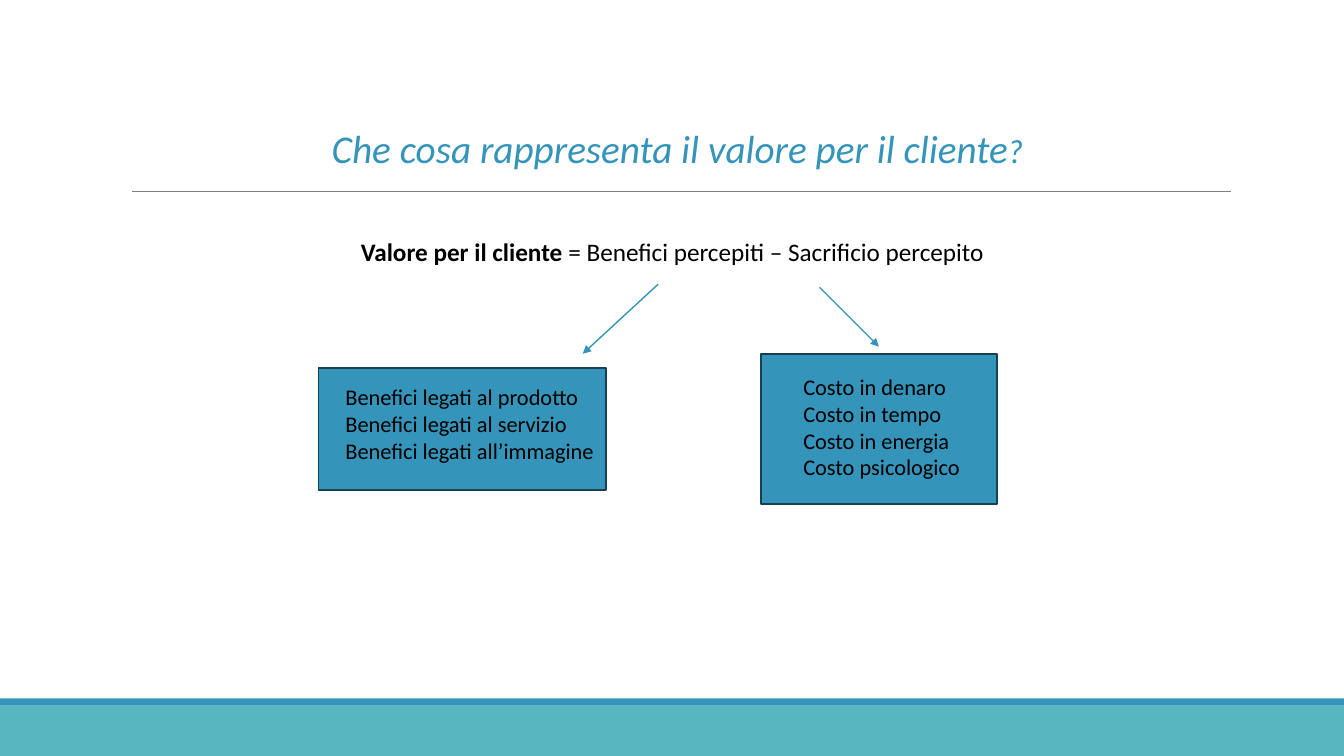
from pptx import Presentation
from pptx.dml.color import RGBColor
from pptx.enum.shapes import MSO_CONNECTOR, MSO_SHAPE
from pptx.enum.text import MSO_ANCHOR, PP_ALIGN
from pptx.oxml.ns import qn
from pptx.util import Inches, Pt
from lxml import etree

STRAIGHT = MSO_CONNECTOR.STRAIGHT
RECTANGLE = MSO_SHAPE.RECTANGLE
TOP = MSO_ANCHOR.TOP
LEFT, CENTER = PP_ALIGN.LEFT, PP_ALIGN.CENTER

BLUE = RGBColor(0x34, 0x94, 0xBA)
TEAL = RGBColor(0x58, 0xB6, 0xC0)
NAVY = RGBColor(0x17, 0x41, 0x52)
GRAY = RGBColor(0x80, 0x80, 0x80)
BLACK = RGBColor(0, 0, 0)

FONT = "Calibri"
SLIDE_WIDTH, SLIDE_HEIGHT = Inches(13.33), Inches(7.5)
COLUMNS, ROWS = 100, 75

BENEFITS = ["Benefici legati al prodotto", "Benefici legati al servizio",
            "Benefici legati all’immagine"]
COSTS = ["Costo in denaro", "Costo in tempo", "Costo in energia", "Costo psicologico"]


def across(columns):
    return round(SLIDE_WIDTH * columns / COLUMNS)


def down(rows):
    return round(SLIDE_HEIGHT * rows / ROWS)


def place(left, top, width, height):
    """Turn grid columns and rows into slide lengths."""
    return across(left), down(top), across(width), down(height)


def apply_format(target, values):
    for name, value in values.items():
        setattr(target, name, value)


def add_span(para, text, **font_format):
    span = para.add_run()
    span.text = text
    color = font_format.pop("color")
    apply_format(span.font, {"name": FONT, **font_format})
    span.font.color.rgb = color


def add_rectangle(page, area, fill, outline=None):
    box = page.shapes.add_shape(RECTANGLE, *place(*area))
    box.shadow.inherit = False
    box.fill.solid()
    box.fill.fore_color.rgb = fill
    if outline is None:
        box.line.fill.background()
    else:
        box.line.color.rgb = outline
        box.line.width = Pt(1.25)
    return box


def add_list_box(page, area, lines, inset_left, inset_top):
    box = add_rectangle(page, area, BLUE, NAVY)
    frame = box.text_frame
    apply_format(frame, {"word_wrap": True, "vertical_anchor": TOP,
                         "margin_left": across(inset_left), "margin_right": 0,
                         "margin_top": down(inset_top), "margin_bottom": 0})
    for index, line in enumerate(lines):
        para = frame.add_paragraph() if index else frame.paragraphs[0]
        para.alignment = LEFT
        add_span(para, line, size=Pt(16), color=BLACK)


def add_line(page, start, end, color, width, arrow=False):
    line = page.shapes.add_connector(STRAIGHT, across(start[0]), down(start[1]),
                                     across(end[0]), down(end[1]))
    line.line.color.rgb = color
    line.line.width = Pt(width)
    if arrow:
        etree.SubElement(line.line._get_or_add_ln(), qn("a:tailEnd"), type="triangle")
    etree.SubElement(line._element.spPr, qn("a:effectLst"))


def add_question_and_formula(page):
    frame = page.shapes.add_textbox(*place(8.78, 12.4, 82.5, 24.4)).text_frame
    apply_format(frame, {"word_wrap": True, "margin_left": 0, "margin_right": 0})

    question = frame.paragraphs[0]
    question._p.get_or_add_pPr().set("marL", str(Inches(0.1)))
    apply_format(question, {"alignment": CENTER, "line_spacing": 0.9})
    add_span(question, "Che cosa rappresenta il valore per il cliente",
             size=Pt(28), italic=True, color=BLUE)
    add_span(question, "?", size=Pt(24), italic=True, color=BLUE)

    formula = frame.add_paragraph()
    apply_format(formula, {"alignment": CENTER, "line_spacing": 0.9,
                           "space_before": Pt(48)})
    add_span(formula, "Valore per il cliente ", size=Pt(18), bold=True, color=BLACK)
    add_span(formula, "= Benefici percepiti – Sacrificio percepito",
             size=Pt(18), color=BLACK)


def main():
    deck = Presentation()
    deck.slide_width, deck.slide_height = SLIDE_WIDTH, SLIDE_HEIGHT
    page = deck.slides.add_slide(deck.slide_layouts[6])

    add_rectangle(page, (0, 70, COLUMNS, 5), TEAL)
    add_rectangle(page, (0, 69.3, COLUMNS, 0.7), BLUE)
    add_line(page, (9.83, 19), (91.6, 19), GRAY, 0.5)
    add_question_and_formula(page)

    add_list_box(page, (23.7, 36.5, 21.38, 12.1), BENEFITS, 2, 1.5)
    add_list_box(page, (56.62, 35.1, 17.55, 14.9), COSTS, 3.15, 1.9)
    add_line(page, (48.97, 28.2), (43.36, 35.1), BLUE, 1, arrow=True)
    add_line(page, (60.98, 28.5), (65.4, 34.4), BLUE, 1, arrow=True)

    deck.save("out.pptx")


if __name__ == "__main__":
    main()
